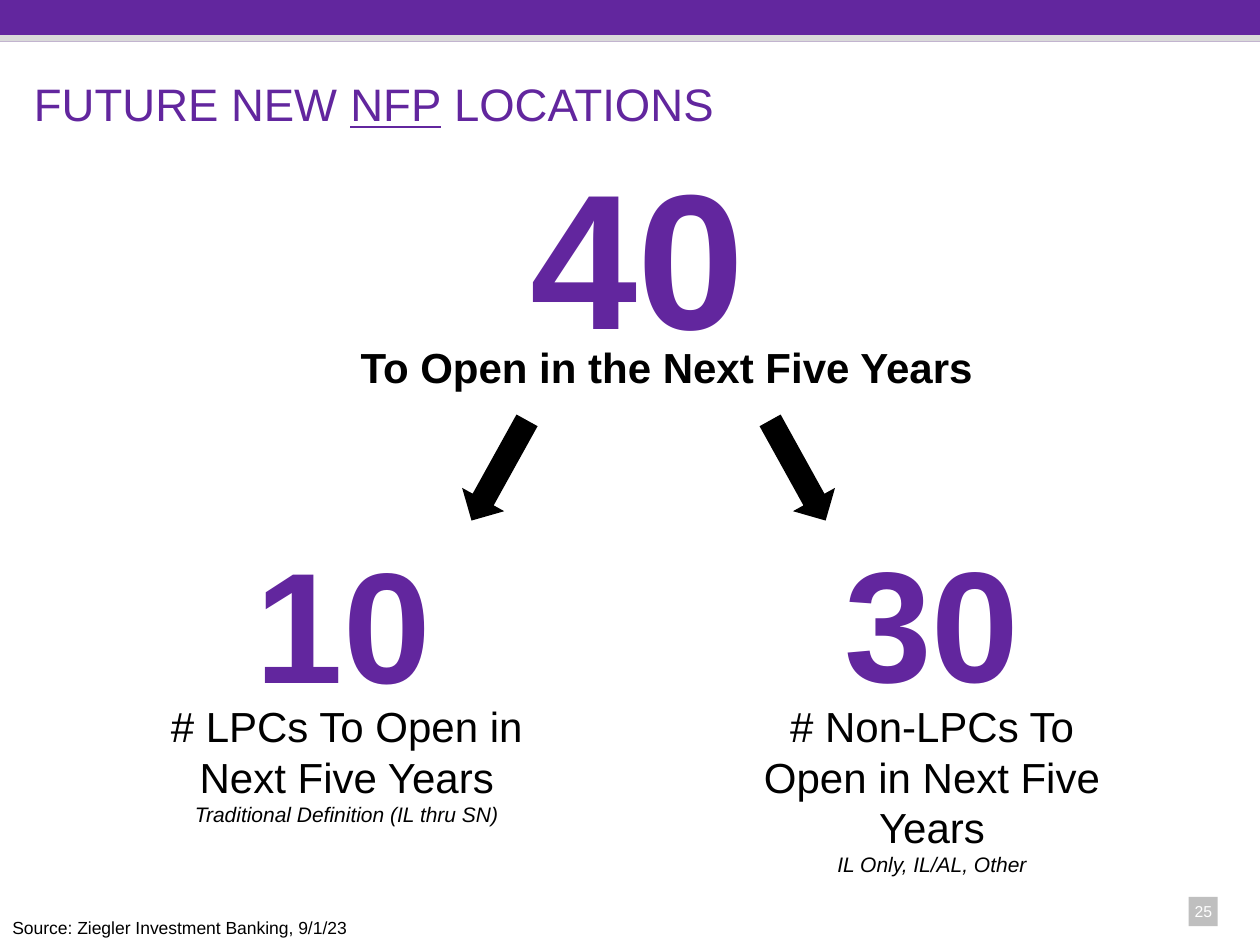
from dataclasses import dataclass

from pptx import Presentation
from pptx.dml.color import RGBColor
from pptx.enum.shapes import MSO_SHAPE as Shape
from pptx.enum.text import MSO_ANCHOR as Anchor, MSO_AUTO_SIZE as AutoSize, PP_ALIGN as Align
from pptx.util import Cm, Pt

COLORS = {
    "purple": "62269E",
    "light": "D9D9D9",
    "gray": "BFBFBF",
    "black": "000000",
    "white": "FFFFFF",
}
FONT = "Arial"


@dataclass
class Box:
    left: float
    top: float
    width: float
    height: float

    def emu(self) -> tuple:
        return tuple(Cm(v) for v in (self.left, self.top, self.width, self.height))


@dataclass
class Line:
    text: str
    size: float
    color: str = "black"
    bold: bool = False
    italic: bool = False


@dataclass
class Figure:
    value: str
    size: float
    number_box: Box
    caption_box: Box
    caption: list


def rgb(name: str) -> RGBColor:
    return RGBColor.from_string(COLORS[name])


def style(font, size: float, color: str, bold: bool = False, italic: bool = False) -> None:
    font.name, font.size = FONT, Pt(size)
    font.bold, font.italic = bold, italic
    font.color.rgb = rgb(color)


def add_shape(slide, kind, box: Box, color: str, rotation: float = 0) -> None:
    s = slide.shapes.add_shape(kind, *box.emu())
    s.shadow.inherit = False
    s.fill.solid()
    s.fill.fore_color.rgb = rgb(color)
    s.line.fill.background()
    s.rotation = rotation


def add_text(slide, box: Box, lines: list, align=Align.CENTER, wrap: bool = True):
    tf = slide.shapes.add_textbox(*box.emu()).text_frame
    tf.word_wrap = wrap
    tf.auto_size = AutoSize.SHAPE_TO_FIT_TEXT
    tf.text = "\n".join(line.text for line in lines)
    for p, line in zip(tf.paragraphs, lines):
        p.alignment = align
        style(p.runs[0].font, line.size, line.color, line.bold, line.italic)
    return tf


def add_figure(slide, fig: Figure) -> None:
    tf = add_text(slide, fig.number_box, [Line(fig.value, fig.size, "purple", bold=True)])
    tf.auto_size = AutoSize.NONE
    tf.vertical_anchor = Anchor.MIDDLE
    tf.paragraphs[0]._p.get_or_add_pPr().set("marL", str(Cm(0.33)))
    add_text(slide, fig.caption_box, fig.caption)


def add_title(slide, parts: list) -> None:
    title = slide.shapes.title
    title.left, title.top, title.width, title.height = Box(0.43, 0.84, 24.56, 1.93).emu()
    tf = title.text_frame
    tf.vertical_anchor = Anchor.BOTTOM
    p = tf.paragraphs[0]
    p.alignment = Align.LEFT
    for text, underline in parts:
        r = p.add_run()
        r.text = text
        style(r.font, 26, "purple")
        r.font.underline = underline


FIGURES = [
    Figure("40", 110, Box(9.73, 3.61, 5.92, 2.97), Box(6.99, 6.76, 12.9, 1.27),
           [Line("To Open in the Next Five Years", 24, bold=True)]),
    Figure("10", 90, Box(4.22, 11.02, 5.08, 2.97), Box(3.18, 14, 7.62, 2.82),
           [Line("# LPCs To Open in Next Five Years", 24),
            Line("Traditional Definition (IL thru SN)", 12, italic=True)]),
    Figure("30", 90, Box(16.08, 11, 5.08, 2.97), Box(14.61, 14, 8.36, 3.84),
           [Line("# Non-LPCs To Open in Next Five Years", 24),
            Line("IL Only, IL/AL, Other", 12, italic=True)]),
]


def main() -> None:
    prs = Presentation()
    prs.slide_width, prs.slide_height = Cm(25.4), Cm(19.05)
    slide = prs.slides.add_slide(prs.slide_layouts[5])

    # Header bands and page number
    add_shape(slide, Shape.RECTANGLE, Box(0, 0, 25.4, 0.84), "purple")
    add_shape(slide, Shape.RECTANGLE, Box(0, 0.71, 25.4, 0.13), "light")
    add_shape(slide, Shape.RECTANGLE, Box(23.96, 18.08, 0.59, 0.59), "gray")
    add_text(slide, Box(23.09, 18.06, 2.34, 0.64), [Line("25", 9, "white")])

    add_title(slide, [("FUTURE NEW ", False), ("NFP", True), (" LOCATIONS", False)])

    # Total and its two parts
    for fig in FIGURES:
        add_figure(slide, fig)

    # Arrows from the total to each part
    for left, rotation in ((9.58, 29), (15.6, 331)):
        add_shape(slide, Shape.DOWN_ARROW, Box(left, 8.33, 0.97, 2.31), "black", rotation)

    # Source line
    add_text(slide, Box(0, 18.36, 7.52, 0.69),
             [Line("Source: Ziegler Investment Banking, 9/1/23", 10)], Align.LEFT, wrap=False)

    prs.save("out.pptx")


if __name__ == "__main__":
    main()
